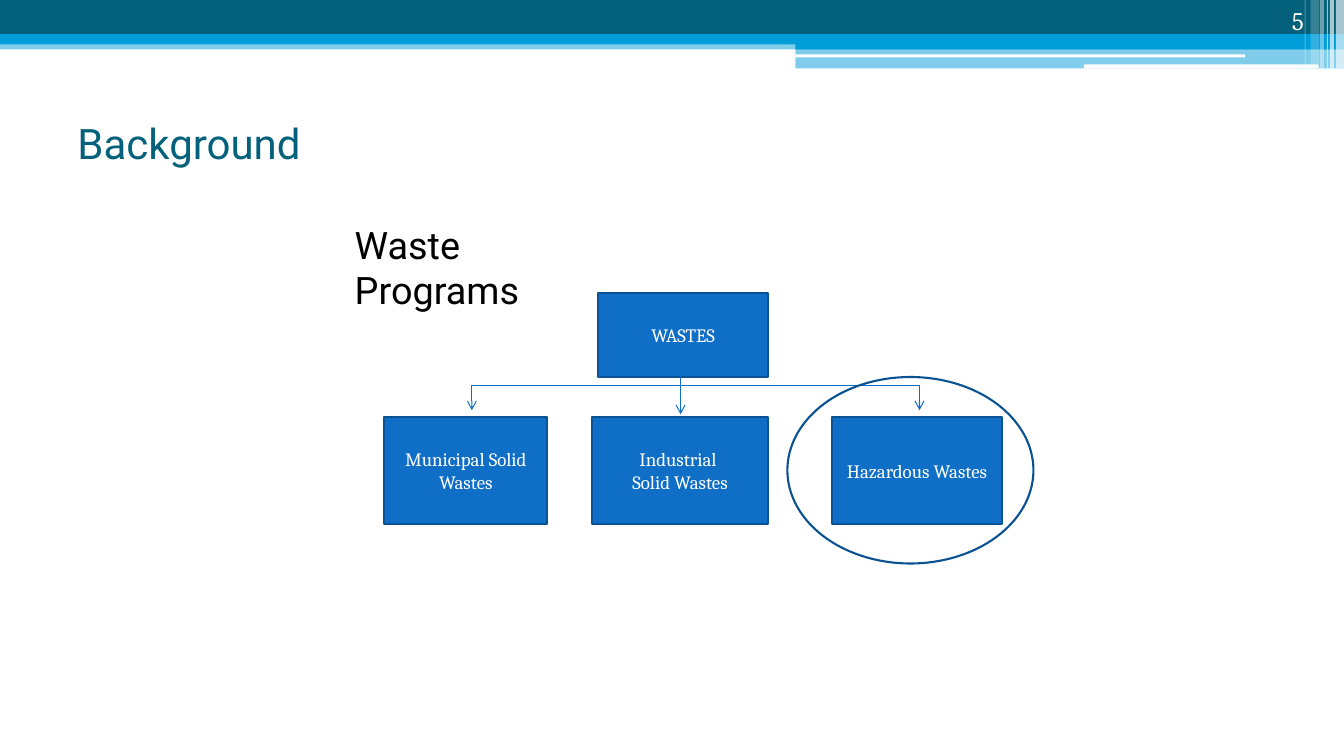
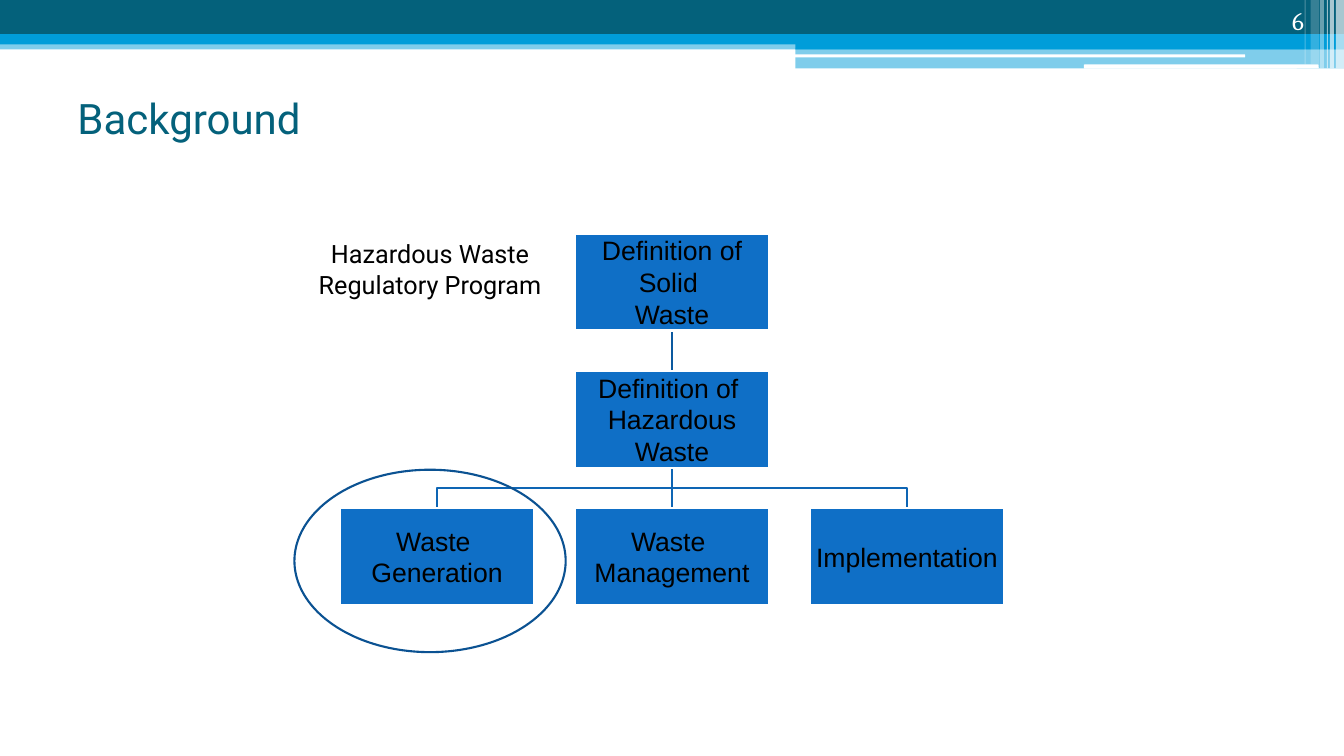
from lxml import etree
from pptx import Presentation
from pptx.dml.color import RGBColor
from pptx.enum.shapes import MSO_CONNECTOR, MSO_SHAPE
from pptx.enum.text import MSO_ANCHOR, PP_ALIGN
from pptx.oxml.ns import qn
from pptx.util import Inches, Pt

RECTANGLE = MSO_SHAPE.RECTANGLE
ROUNDED = MSO_SHAPE.ROUNDED_RECTANGLE
OVAL = MSO_SHAPE.OVAL
STRAIGHT = MSO_CONNECTOR.STRAIGHT
LEFT, CENTER, RIGHT = PP_ALIGN.LEFT, PP_ALIGN.CENTER, PP_ALIGN.RIGHT
TOP, MIDDLE, BOTTOM = MSO_ANCHOR.TOP, MSO_ANCHOR.MIDDLE, MSO_ANCHOR.BOTTOM

SLIDE_WIDTH, SLIDE_HEIGHT = 13.33, 7.5
COLORS = {
    "teal": "04617B",
    "sky": "009DD9",
    "white": "FFFFFF",
    "black": "000000",
    "box": "0F6FC6",
    "outline": "0B5292",
    "stem": "0C599F",
    "branch": "0E65B4",
}
BANDS = [
    (RECTANGLE, 0, 0.4, SLIDE_WIDTH, 0.09, "sky", 50),
    (RECTANGLE, 0, 0, SLIDE_WIDTH, 0.34, "teal", 100),
    (RECTANGLE, 0, 0.34, SLIDE_WIDTH, 0.1, "sky", 100),
    (RECTANGLE, 7.89, 0.39, 5.44, 0.1, "sky", 100),
    (RECTANGLE, 7.89, 0.48, 5.44, 0.2, "sky", 50),
    (ROUNDED, 7.88, 0.54, 4.47, 0.03, "white", 100),
    (ROUNDED, 10.75, 0.64, 2.33, 0.04, "white", 100),
    (RECTANGLE, 13.25, 0, 0.08, 0.68, "white", 65),
    (RECTANGLE, 13.19, 0, 0.04, 0.68, "white", 65),
    (RECTANGLE, 13.16, 0, 0.01, 0.68, "white", 60),
    (RECTANGLE, 13.09, 0, 0.04, 0.68, "white", 40),
    (RECTANGLE, 13, 0, 0.08, 0.64, "white", 20),
    (RECTANGLE, 12.94, 0, 0.01, 0.64, "white", 30),
]


def color(name):
    return RGBColor.from_string(COLORS[name])


def set_line(shape, line_color, width):
    shape.line.color.rgb = color(line_color)
    shape.line.width = Pt(width)


def add_block(slide, kind, box, fill=None, line=None, opacity=100):
    shape = slide.shapes.add_shape(kind, *map(Inches, box))
    shape.shadow.inherit = False
    if fill:
        shape.fill.solid()
        shape.fill.fore_color.rgb = color(fill)
    else:
        shape.fill.background()
    if opacity < 100:
        fill_color = shape.element.spPr.find(qn("a:solidFill"))[0]
        etree.SubElement(fill_color, qn("a:alpha")).set("val", str(opacity * 1000))
    if line:
        set_line(shape, line, 1.5)
    else:
        shape.line.fill.background()
    return shape


def set_text(shape, text, font, size, text_color, align=CENTER, anchor=MIDDLE, inset=None):
    frame = shape.text_frame
    frame.word_wrap = True
    frame.vertical_anchor = anchor
    if inset is not None:
        frame.margin_left = frame.margin_right = Inches(inset)
        frame.margin_top = frame.margin_bottom = Inches(inset)
    frame.text = text
    for paragraph in frame.paragraphs:
        paragraph.alignment = align
        for run in paragraph.runs:
            run.font.name = font
            run.font.size = Pt(size)
            run.font.color.rgb = color(text_color)


def add_text(slide, box, *text_settings):
    set_text(slide.shapes.add_textbox(*map(Inches, box)), *text_settings)


def add_line(slide, start, end, line_color, width, arrow=False):
    connector = slide.shapes.add_connector(STRAIGHT, *map(Inches, start + end))
    set_line(connector, line_color, width)
    if arrow:
        etree.SubElement(connector.line._get_or_add_ln(), qn("a:tailEnd")).set("type", "arrow")
    etree.SubElement(connector.element.spPr, qn("a:effectLst"))


def add_elbow(slide, start, end):
    (x1, y1), (x2, y2) = start, end
    middle = (y1 + y2) / 2
    builder = slide.shapes.build_freeform(Inches(x1), Inches(y1))
    corners = [(x1, middle), (x2, middle), (x2, y2)]
    builder.add_line_segments([(Inches(x), Inches(y)) for x, y in corners], close=False)
    shape = builder.convert_to_shape()
    shape.shadow.inherit = False
    shape.fill.background()
    set_line(shape, "branch", 1.5)


def add_base_slide(presentation, number, title, title_box):
    slide = presentation.slides.add_slide(presentation.slide_layouts[6])
    for kind, left, top, width, height, fill, opacity in BANDS:
        add_block(slide, kind, (left, top, width, height), fill, opacity=opacity)
    add_text(slide, title_box, title, "Roboto", 30, "teal", LEFT)
    add_text(slide, (11.92, 0, 1.11, 0.4), str(number), "Cambria", 18, "white", RIGHT, BOTTOM)
    return slide


def add_waste_types(slide, left, top):
    row_top = top + 1.23
    boxes = [
        ("WASTES", 2.12, top, 1.69, 0.83),
        ("Municipal Solid Wastes", 0, row_top, 1.62, 1.06),
        ("Industrial \nSolid Wastes", 2.06, row_top, 1.75, 1.06),
        ("Hazardous Wastes", 4.44, row_top, 1.69, 1.06),
    ]
    for text, offset, box_top, width, height in boxes:
        shape = add_block(slide, RECTANGLE, (left + offset, box_top, width, height), "box", "outline")
        set_text(shape, text, "Cambria", 13.5, "white")
    trunk, bar = left + 2.94, top + 0.91
    add_line(slide, (trunk, top + 0.7), (trunk, top + 1.2), "box", 0.75, True)
    for end in (left + 0.87, left + 5.31):
        add_line(slide, (trunk, bar), (end, bar), "box", 0.75)
        add_line(slide, (end, bar), (end, bar + 0.25), "box", 0.75, True)


def add_program_tree(slide, left, top):
    width, height, gap = 1.93, 0.96, 0.4
    boxes = [
        ("Definition of Solid \nWaste", 1, 0),
        ("Definition of \nHazardous Waste", 1, 1),
        ("Waste \nGeneration", 0, 2),
        ("Waste \nManagement", 1, 2),
        ("Implementation", 2, 2),
    ]
    column_lefts = [left + column * (width + gap) for column in range(3)]
    row_tops = [top + row * (height + gap) for row in range(3)]
    centers = [column_left + width / 2 for column_left in column_lefts]
    trunk, fork = centers[1], row_tops[1] + height
    for end in (centers[2], centers[0]):
        add_elbow(slide, (trunk, fork), (end, row_tops[2]))
    add_line(slide, (trunk, fork), (trunk, row_tops[2]), "branch", 1.5)
    add_line(slide, (trunk, top + height), (trunk, row_tops[1]), "stem", 1.5)
    for text, column, row in boxes:
        box = (column_lefts[column], row_tops[row], width, height)
        shape = add_block(slide, RECTANGLE, box, "box", "white")
        set_text(shape, text, "Arial", 19, "black", inset=0.01)


def build_waste_programs(presentation):
    slide = add_base_slide(presentation, 5, "Background", (0.67, 0.89, 12, 1.06))
    add_waste_types(slide, 3.81, 2.91)
    add_text(slide, (3.42, 2.15, 2.83, 1.01), "Waste Programs", "Roboto", 27, "black", LEFT, TOP)
    add_block(slide, OVAL, (7.81, 3.74, 2.44, 1.85), line="outline")


def build_regulatory_program(presentation):
    slide = add_base_slide(presentation, 6, "Background", (0.67, 0.58, 12, 1.17))
    add_program_tree(slide, 3.37, 2.32)
    caption = "Hazardous Waste Regulatory Program"
    add_text(slide, (2.92, 2.32, 2.69, 0.93), caption, "Roboto", 18, "black", CENTER, TOP)
    add_block(slide, OVAL, (2.92, 4.66, 2.69, 1.81), line="outline")


def main():
    presentation = Presentation()
    presentation.slide_width = Inches(SLIDE_WIDTH)
    presentation.slide_height = Inches(SLIDE_HEIGHT)
    build_waste_programs(presentation)
    build_regulatory_program(presentation)
    presentation.save("out.pptx")


if __name__ == "__main__":
    main()
